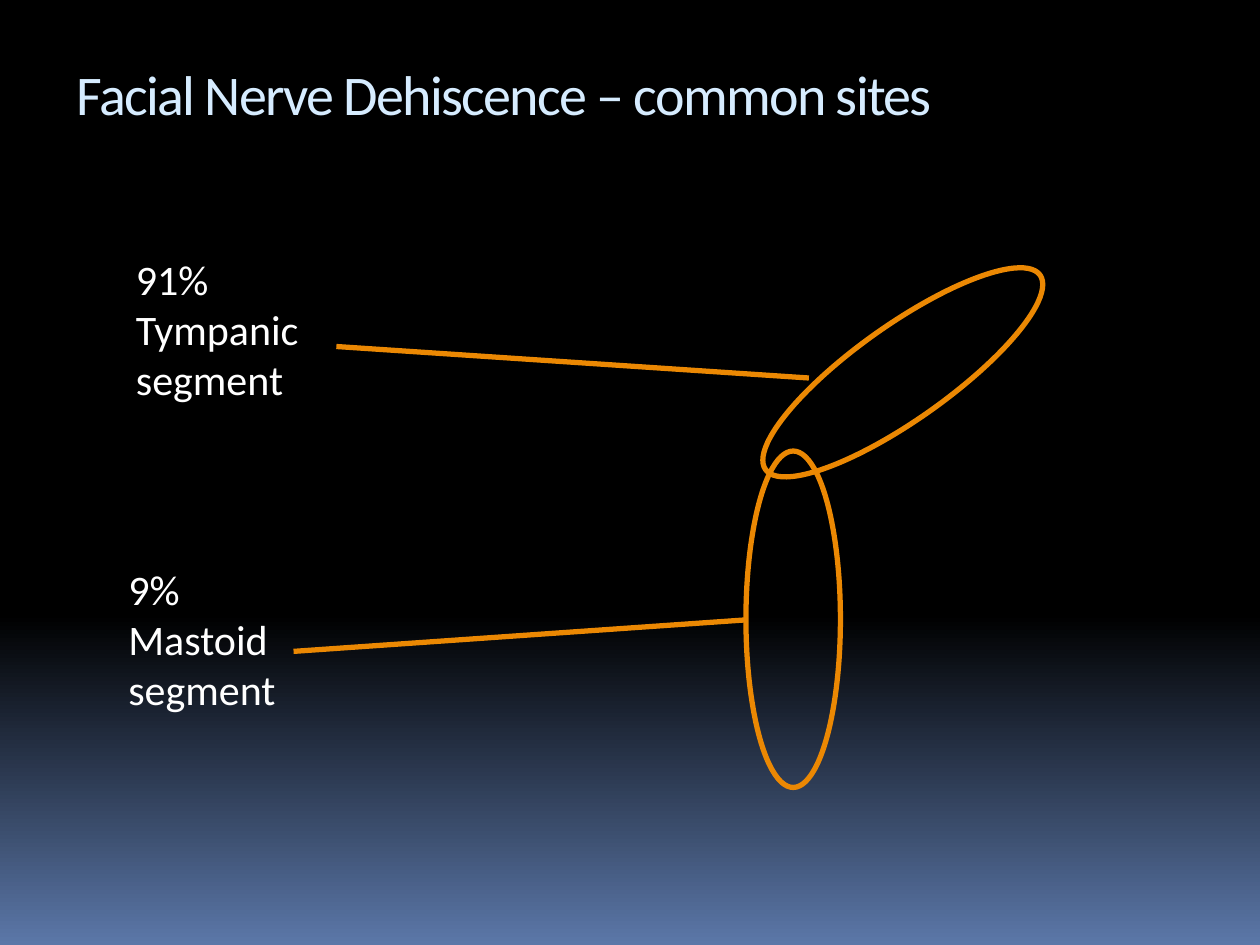
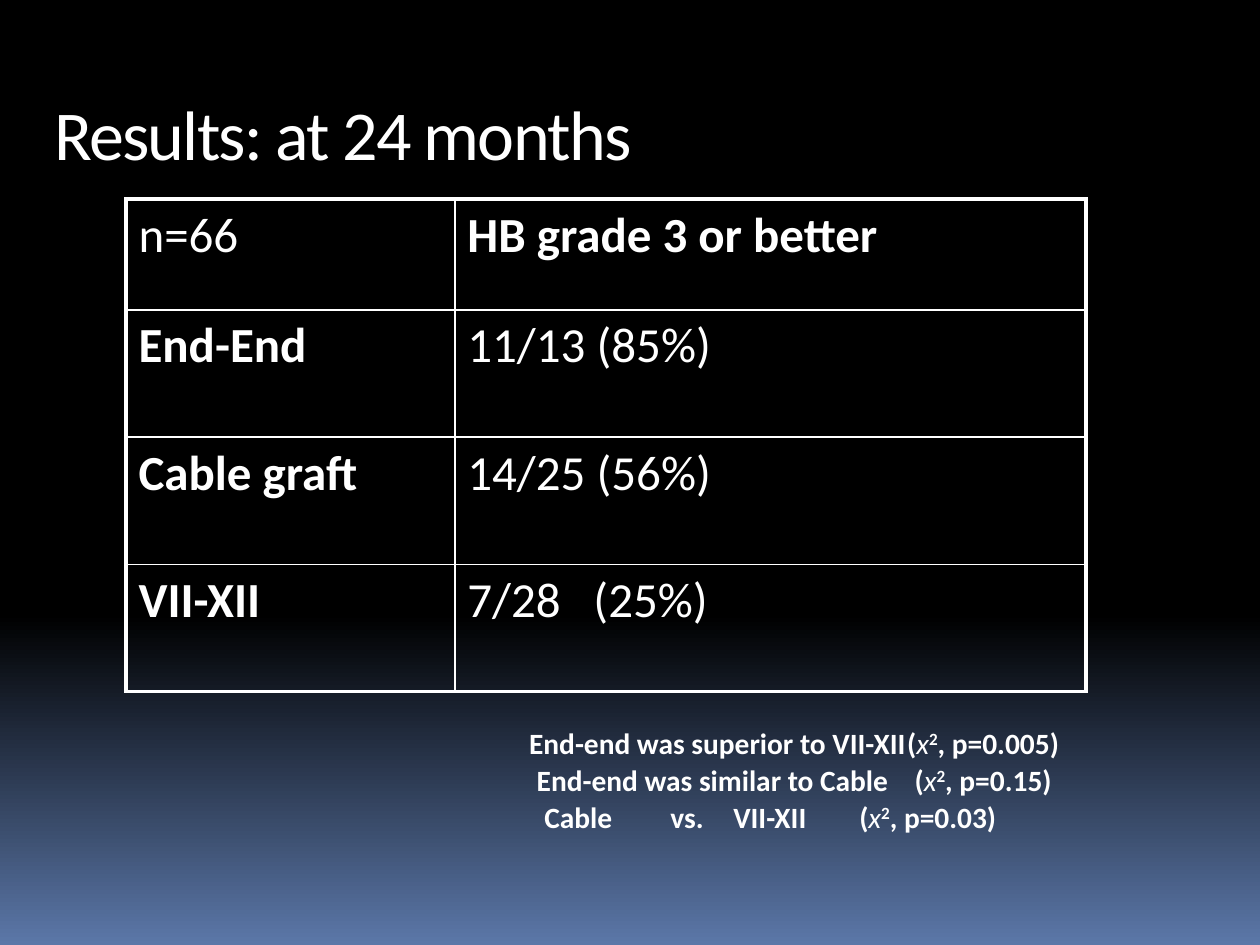
from lxml.etree import SubElement
from pptx import Presentation
from pptx.dml.color import RGBColor
from pptx.enum.shapes import MSO_CONNECTOR, MSO_SHAPE
from pptx.enum.text import MSO_ANCHOR, MSO_AUTO_SIZE, PP_ALIGN
from pptx.oxml.ns import qn
from pptx.util import Inches, Pt

FONT = "Calibri"
WHITE, BLACK, BLUE = "FFFFFF", "000000", "5B77A8"
PALE_BLUE, ORANGE = "D6ECFF", "EB8803"


def rgb(value):
    return RGBColor.from_string(value)


def box(*lengths):
    return [Inches(n) for n in lengths]


def add_run(p, text, size, color=WHITE, bold=False, italic=False, spacing=0, raised=0):
    """Spacing is in points, raised in percent of the text size."""
    r = p.add_run()
    r.text = text
    f = r.font
    f.name, f.size, f.bold, f.italic = FONT, Pt(size), bold, italic
    f.color.rgb = rgb(color)
    rPr = r._r.get_or_add_rPr()
    if spacing:
        rPr.set("spc", str(spacing * 100))
    if raised:
        rPr.set("baseline", str(raised * 1000))


def set_tabs(p, stops, indent=0):
    pPr = p._p.get_or_add_pPr()
    pPr.set("marL", str(Inches(indent)))
    pPr.set("indent", "0")
    tabs = SubElement(pPr, qn("a:tabLst"))
    for stop in stops:
        SubElement(tabs, qn("a:tab"), pos=str(Inches(stop)), algn="l")


def set_borders(cell, widths):
    """Widths in points, keyed by side: L, R, T, B."""
    tcPr = cell._tc.get_or_add_tcPr()
    for side in "LRTB":
        ln = SubElement(tcPr, qn(f"a:ln{side}"), w=str(Pt(widths[side])))
        SubElement(SubElement(ln, qn("a:solidFill")), qn("a:srgbClr"), val=WHITE)


class Deck:
    def __init__(self):
        self.prs = Presentation()
        self.prs.slide_width, self.prs.slide_height = box(10, 7.5)
        fill = self.prs.slide_master.background.fill
        fill.gradient()
        fill.gradient_angle = 270
        for stop, position, color in zip(fill.gradient_stops, (0.65, 1), (BLACK, BLUE)):
            stop.position = position
            stop.color.rgb = rgb(color)

    def slide(self, title, place, size, color=WHITE):
        self.s = self.prs.slides.add_slide(self.prs.slide_layouts[5])
        sp = self.s.shapes.title
        sp.left, sp.top, sp.width, sp.height = box(*place)
        tf = sp.text_frame
        tf.vertical_anchor = MSO_ANCHOR.TOP
        tf.auto_size = MSO_AUTO_SIZE.NONE
        p = tf.paragraphs[0]
        p.alignment = PP_ALIGN.LEFT
        add_run(p, title, size, color, spacing=-1)

    def label(self, shapes, lines, place):
        tf = shapes.add_textbox(*box(*place)).text_frame
        tf.word_wrap = False
        tf.auto_size = MSO_AUTO_SIZE.SHAPE_TO_FIT_TEXT
        for i, line in enumerate(lines):
            add_run(tf.add_paragraph() if i else tf.paragraphs[0], line, 24)

    def ring(self, shapes, place, rotation):
        sp = shapes.add_shape(MSO_SHAPE.OVAL, *box(*place))
        sp.shadow.inherit = False
        sp.rotation = rotation
        sp.fill.background()
        sp.line.color.rgb = rgb(ORANGE)
        sp.line.width = Pt(3)

    def line(self, shapes, start, end):
        c = shapes.add_connector(MSO_CONNECTOR.STRAIGHT, *box(*start, *end))
        c.line.color.rgb = rgb(ORANGE)
        c.line.width = Pt(3)
        SubElement(c._element.spPr, qn("a:effectLst"))

    def callout(self, lines, text_place, ring_place, start, end, rotation=0):
        """A label tied by a line to the ring that marks its site."""
        shapes = self.s.shapes.add_group_shape().shapes
        self.label(shapes, lines, text_place)
        self.ring(shapes, ring_place, rotation)
        self.line(shapes, start, end)

    def table(self, rows, place, col_widths, row_heights):
        frame = self.s.shapes.add_table(len(rows), len(col_widths), *box(*place))
        table = frame.table
        table.first_row = table.horz_banding = False
        for column, width in zip(table.columns, col_widths):
            column.width = Inches(width)
        for row, height in zip(table.rows, row_heights):
            row.height = Inches(height)
        last_row, last_col = len(rows) - 1, len(col_widths) - 1
        for i, row in enumerate(rows):
            for j, text in enumerate(row):
                cell = table.cell(i, j)
                outer = {"L": j == 0, "R": j == last_col, "T": i == 0, "B": i == last_row}
                set_borders(cell, {k: 2.25 if v else 1 for k, v in outer.items()})
                cell.fill.background()
                p = cell.text_frame.paragraphs[0]
                if "\t" in text:
                    set_tabs(p, [1.02])
                add_run(p, text, 28, bold=(i == 0) != (j == 0))

    def findings(self, rows, place):
        """Comparisons with their p values, each row a step further in."""
        tf = self.s.shapes.add_textbox(*box(*place)).text_frame
        tf.word_wrap = True
        tf.margin_left, tf.margin_right = box(3.7, 0)
        for i, (text, value, stops) in enumerate(rows):
            p = tf.add_paragraph() if i else tf.paragraphs[0]
            p.line_spacing = 0.7
            p.space_before = Pt(7)
            set_tabs(p, [*stops, 4], indent=0.06 * i)
            add_run(p, f"{text}\t(", 16.8, bold=True)
            add_run(p, "x", 16.8, italic=True)
            add_run(p, "2", 16.8, bold=True, raised=30)
            add_run(p, f", p={value})", 16.8, bold=True)


def main():
    deck = Deck()

    deck.slide("Facial Nerve Dehiscence – common sites", (0.51, 0.42, 7.24, 0.75), 32, PALE_BLUE)
    deck.callout(["9%", "Mastoid", "segment"], (0.92, 4.42, 1.43, 1.31),
                 (5.92, 3.58, 0.75, 2.67), (2.33, 5.17), (5.92, 4.92))
    deck.callout(["91%", "Tympanic", "segment"], (0.98, 1.96, 1.56, 1.31),
                 (6.79, 1.62, 0.75, 2.67), (2.67, 2.75), (6.42, 3), rotation=54.7)

    deck.slide("Results: at 24 months", (0.33, 0.67, 8.5, 0.92), 40)
    deck.table([("n=66", "HB grade 3 or better"),
                ("End-End", "11/13 (85%)"),
                ("Cable graft", "14/25 (56%)"),
                ("VII-XII", "7/28\t(25%)")],
               (1, 1.58, 7.62, 3.92), (2.61, 5.01), (0.88, 1.01, 1.01, 1.01))
    deck.findings([("End-end was superior to VII-XII", "0.005", []),
                   ("End-end was similar to Cable", "0.15", []),
                   ("Cable\tvs.\tVII-XII", "0.03", [0.74, 1.16])],
                  (0.5, 5.78, 9, 0.92))

    deck.prs.save("out.pptx")


if __name__ == "__main__":
    main()
